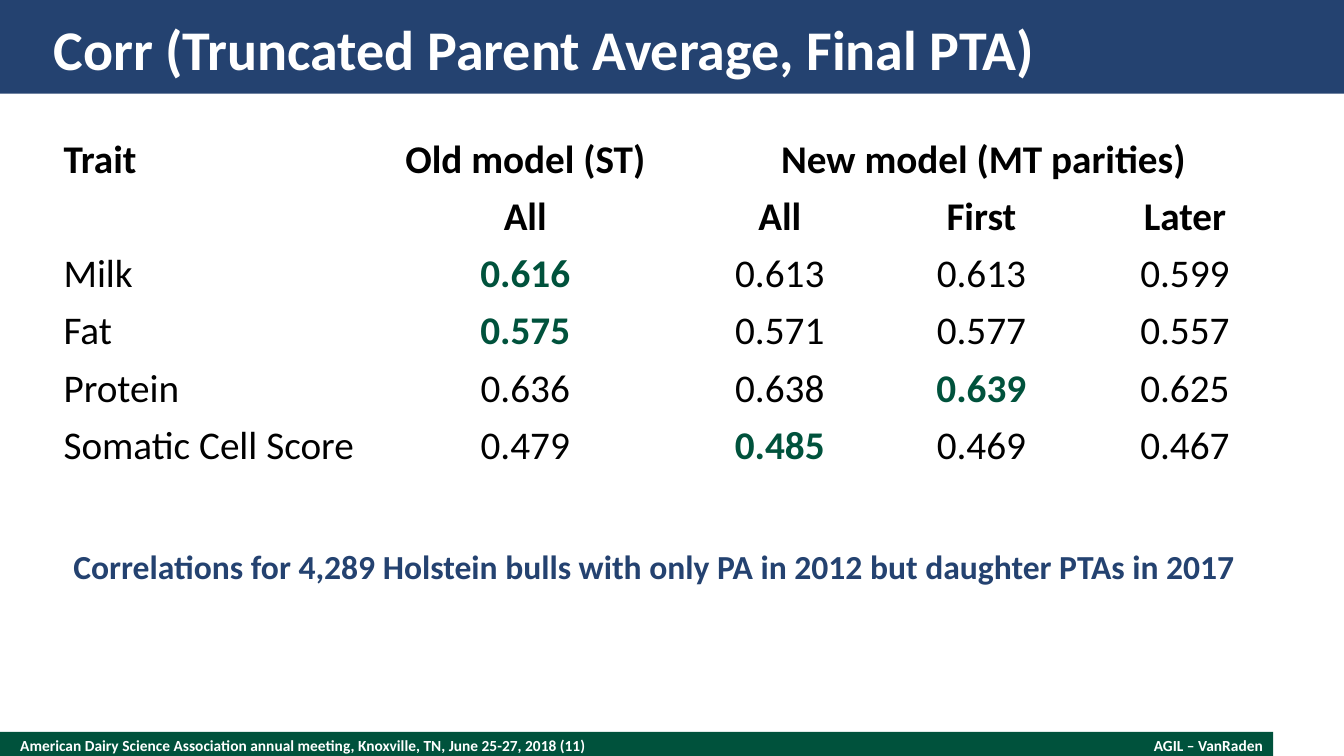
from pptx import Presentation
from pptx.dml.color import RGBColor
from pptx.enum.shapes import MSO_SHAPE as Preset
from pptx.enum.text import MSO_ANCHOR as Anchor, PP_ALIGN as Align
from pptx.util import Pt

COLORS = {"navy": "244270", "green": "00523C", "white": "FFFFFF", "black": "000000"}


class SlideBuilder:
    font_name = "Calibri"

    def __init__(self, slide):
        self.slide = slide

    def color(self, name):
        return RGBColor.from_string(COLORS[name])

    def fill_text(self, frame, text, size, color, bold=True, align=Align.LEFT):
        paragraph = frame.paragraphs[0]
        paragraph.text = text
        paragraph.alignment = align
        font_format = {"name": self.font_name, "size": Pt(size), "bold": bold}
        for attribute, value in font_format.items():
            setattr(paragraph.font, attribute, value)
        paragraph.font.color.rgb = self.color(color)

    def bar(self, box, color):
        shape = self.slide.shapes.add_shape(Preset.RECTANGLE, *map(Pt, box))
        shape.shadow.inherit = False
        shape.fill.solid()
        shape.fill.fore_color.rgb = self.color(color)
        shape.line.fill.background()

    def text(self, box, text, size, color, align=Align.LEFT):
        frame = self.slide.shapes.add_textbox(*map(Pt, box)).text_frame
        frame_format = {"word_wrap": True, "vertical_anchor": Anchor.MIDDLE,
                        "margin_left": 0, "margin_right": 0,
                        "margin_top": 0, "margin_bottom": 0}
        for attribute, value in frame_format.items():
            setattr(frame, attribute, value)
        self.fill_text(frame, text, size, color, align=align)

    def table(self, left, top, widths, row_height, rows, size, header_rows, highlights):
        shape = self.slide.shapes.add_table(
            len(rows), len(widths), Pt(left), Pt(top),
            Pt(sum(widths)), Pt(row_height * len(rows)))
        table = shape.table
        table.first_row = table.horz_banding = False
        for column, width in zip(table.columns, widths):
            column.width = Pt(width)
        for row_index, row in enumerate(rows):
            for column_index, text in enumerate(row):
                cell = table.cell(row_index, column_index)
                cell.fill.background()
                highlighted = (row_index, column_index) in highlights
                self.fill_text(cell.text_frame, text, size,
                               "green" if highlighted else "black",
                               bold=highlighted or row_index < header_rows,
                               align=Align.CENTER if column_index else Align.LEFT)
        return table


def main():
    presentation = Presentation()
    presentation.slide_width, presentation.slide_height = Pt(960), Pt(540)
    builder = SlideBuilder(presentation.slides.add_slide(presentation.slide_layouts[6]))

    builder.bar((0, 522.7, 909.4, 19.4), "green")
    builder.bar((0, 0, 960, 67), "navy")
    builder.text((14.4, 522.7, 624, 19.4),
                 "American Dairy Science Association annual meeting, "
                 "Knoxville, TN, June 25-27, 2018 (11)", 11, "white")
    builder.text((691.2, 525.6, 211, 13.7), "AGIL – VanRaden", 11, "white", Align.RIGHT)
    builder.text((38.2, 9.4, 883.4, 50.4),
                 "Corr (Truncated Parent Average, Final PTA)", 40, "white")

    rows = [
        ("Trait", "Old model (ST)", "New model (MT parities)", "", ""),
        ("", "All", "All", "First", "Later"),
        ("Milk", "0.616", "0.613", "0.613", "0.599"),
        ("Fat", "0.575", "0.571", "0.577", "0.557"),
        ("Protein", "0.636", "0.638", "0.639", "0.625"),
        ("Somatic Cell Score", "0.479", "0.485", "0.469", "0.467"),
    ]
    correlations = builder.table(
        38.2, 93.6, (229, 216, 147.6, 140.4, 150.4), 40.8, rows, 28,
        header_rows=2, highlights={(2, 1), (3, 1), (4, 3), (5, 2)})
    correlations.cell(0, 2).merge(correlations.cell(0, 4))

    builder.text((52.4, 386, 840, 36),
                 "Correlations for 4,289 Holstein bulls with only PA in 2012 "
                 "but daughter PTAs in 2017", 24, "navy")
    presentation.save("out.pptx")


if __name__ == "__main__":
    main()
